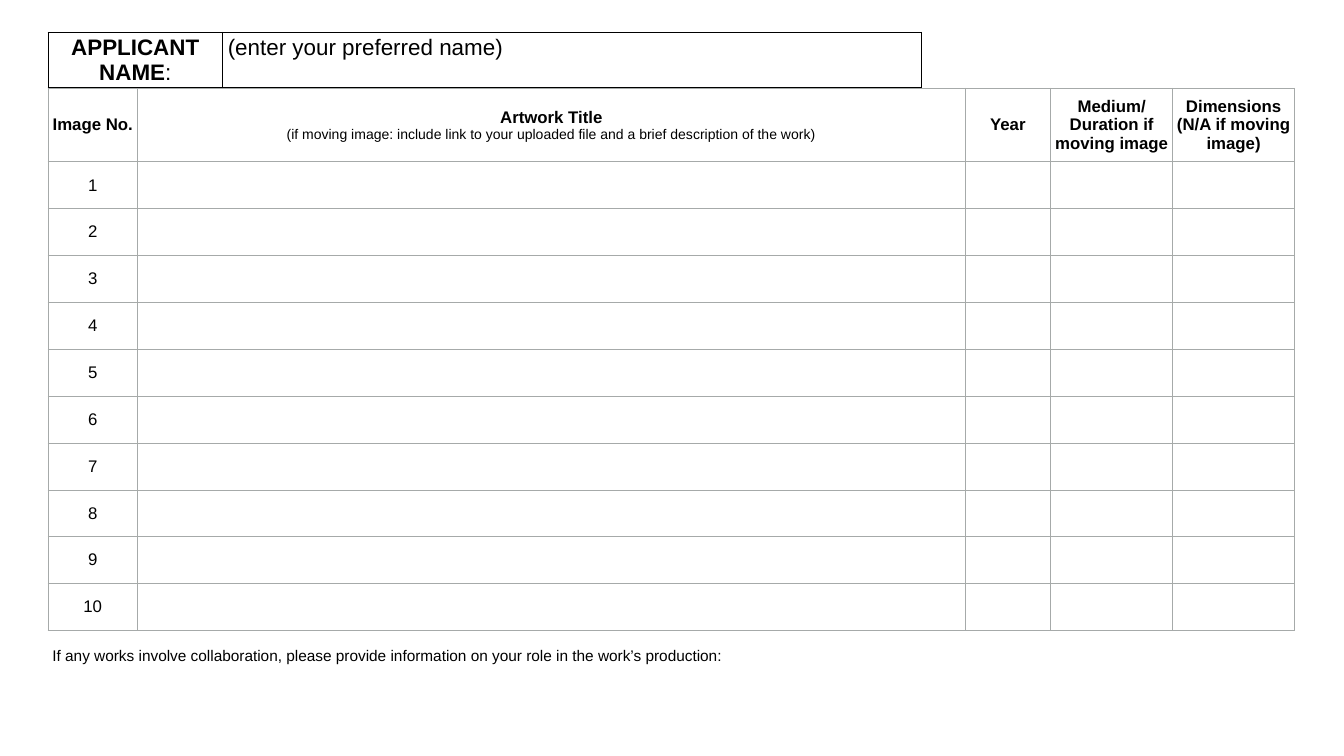
from dataclasses import dataclass

from pptx import Presentation
from pptx.dml.color import RGBColor as RGB
from pptx.enum.text import MSO_ANCHOR as Anchor, PP_ALIGN as Align
from pptx.oxml import parse_xml
from pptx.oxml.ns import nsdecls
from pptx.util import Inches, Pt


@dataclass(frozen=True)
class Theme:
    """Colours, font and type sizes of the form."""
    font: str = "Arial"
    ink: str = "000000"
    grid: str = "A6AAA9"
    name: int = 32
    body: int = 24
    note: int = 22
    hint: int = 20


THEME = Theme()
HEADS = [
    [("Image No.", THEME.body, True)],
    [("Artwork Title", THEME.body, True),
     ("(if moving image: include link to your uploaded file "
      "and a brief description of the work)", THEME.hint, False)],
    [("Year", THEME.body, True)],
    [("Medium/", THEME.body, True),
     ("Duration if moving image", THEME.body, True)],
    [("Dimensions", THEME.body, True),
     ("(N/A if moving image)", THEME.body, True)],
]
WORKS = 10


def add_text(para, text, size=THEME.body, bold=False, align=Align.LEFT):
    """Add a formatted run to a paragraph."""
    para.alignment = align
    run = para.add_run()
    run.text = text
    font = run.font
    font.name, font.size, font.bold = THEME.font, Pt(size), bold
    font.color.rgb = RGB.from_string(THEME.ink)


def add_grid(slide, left, top, cols, rows, color):
    """Add an unfilled table with one-point borders."""
    frame = slide.shapes.add_table(
        len(rows), len(cols), Inches(left), Inches(top),
        Inches(sum(cols)), Inches(sum(rows)))
    table = frame.table
    table.first_row = table.horz_banding = False
    for col, width in zip(table.columns, cols):
        col.width = Inches(width)
    for row, height in zip(table.rows, rows):
        row.height = Inches(height)
    for cell in table.iter_cells():
        props = cell._tc.get_or_add_tcPr()
        for side in "LRTB":
            props.append(parse_xml(
                f'<a:ln{side} {nsdecls("a")} w="{Pt(1)}"><a:solidFill>'
                f'<a:srgbClr val="{color}"/></a:solidFill></a:ln{side}>'))
        cell.fill.background()
    return table


def fill_cell(cell, lines):
    """Centre text lines in a cell with narrow margins."""
    cell.vertical_anchor = Anchor.MIDDLE
    cell.margin_left = cell.margin_right = Inches(0.06)
    cell.margin_top = cell.margin_bottom = Inches(0.06)
    frame = cell.text_frame
    for i, (text, size, bold) in enumerate(lines):
        para = frame.add_paragraph() if i else frame.paragraphs[0]
        add_text(para, text, size=size, bold=bold, align=Align.CENTER)


def add_works(slide):
    """Add the list of artworks."""
    table = add_grid(slide, 0.95, 1.75, [1.78, 16.42, 1.7, 2.42, 2.42],
                     [1.46] + [0.93] * WORKS, THEME.grid)
    for col, lines in enumerate(HEADS):
        fill_cell(table.cell(0, col), lines)
    for row in range(1, WORKS + 1):
        fill_cell(table.cell(row, 0), [(str(row), THEME.body, False)])


def add_name(slide):
    """Add the applicant name field."""
    table = add_grid(slide, 0.95, 0.64, [3.47, 13.86], [0.63], THEME.ink)
    label, entry = (table.cell(0, col).text_frame.paragraphs[0]
                    for col in range(2))
    add_text(label, "APPLICANT NAME", size=THEME.name, bold=True,
             align=Align.CENTER)
    add_text(label, ":", size=THEME.name, align=Align.CENTER)
    add_text(entry, "(enter your preferred name)", size=THEME.name)


def add_note(slide):
    """Add the collaboration prompt below the list."""
    box = slide.shapes.add_textbox(
        Inches(0.96), Inches(12.71), Inches(24.74), Inches(1.07))
    frame = box.text_frame
    frame.word_wrap = True
    frame.vertical_anchor = Anchor.TOP
    frame.margin_left = frame.margin_right = Inches(0.08)
    frame.margin_top = frame.margin_bottom = Inches(0.11)
    add_text(frame.paragraphs[0],
             "If any works involve collaboration, please provide "
             "information on your role in the work’s production:",
             size=THEME.note)


def main():
    """Build and save the form."""
    deck = Presentation()
    deck.slide_width, deck.slide_height = Inches(26.67), Inches(15)
    slide = deck.slides.add_slide(deck.slide_layouts[6])
    add_works(slide)
    add_name(slide)
    add_note(slide)
    deck.save("out.pptx")


if __name__ == "__main__":
    main()
